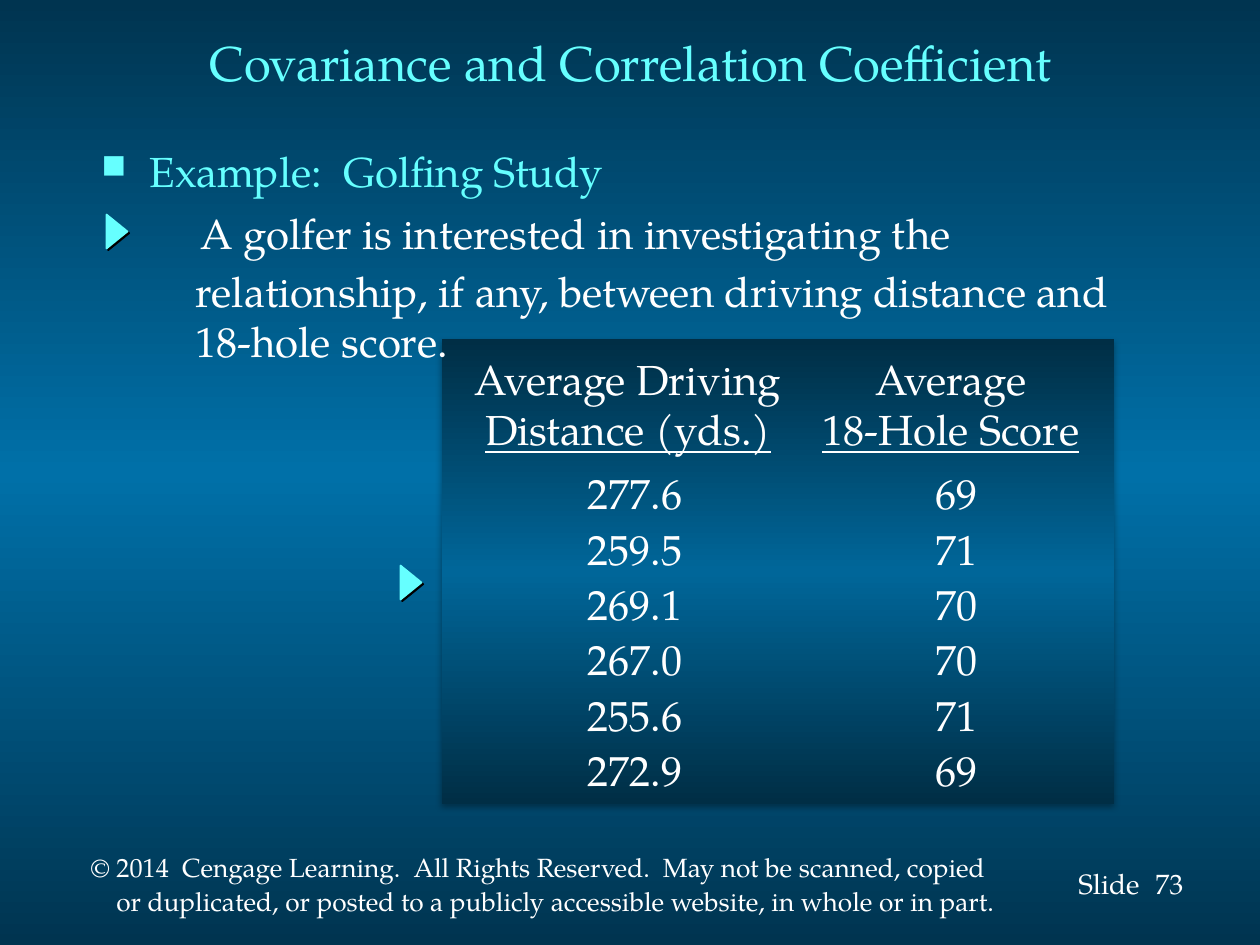
from copy import deepcopy
from pptx import Presentation
from pptx.dml.color import RGBColor
from pptx.enum.shapes import MSO_SHAPE
from pptx.enum.text import MSO_ANCHOR, PP_ALIGN
from pptx.oxml import parse_xml
from pptx.oxml.ns import nsdecls, qn
from pptx.util import Emu, Pt

RECT, WEDGE = MSO_SHAPE.RECTANGLE, MSO_SHAPE.ISOSCELES_TRIANGLE
TOP, MIDDLE = MSO_ANCHOR.TOP, MSO_ANCHOR.MIDDLE
LEFT, CENTER = PP_ALIGN.LEFT, PP_ALIGN.CENTER
WHITE = RGBColor(0xFF, 0xFF, 0xFF)
AQUA = RGBColor(0x66, 0xFF, 0xFF)
DEEP, SEA = RGBColor(0x00, 0x34, 0x50), RGBColor(0x00, 0x70, 0xA8)
DARK, BLUE = RGBColor(0x00, 0x2E, 0x45), RGBColor(0x00, 0x66, 0x99)
FONT = "TeX Gyre Pagella"


def px(n):
    return Emu(round(n * 914400 / 126))


class Deck:
    """Holds the style and the current slide."""

    def __init__(self):
        self.prs = Presentation()
        self.prs.slide_width, self.prs.slide_height = px(1260), px(945)
        self.slide = self.prs.slides.add_slide(self.prs.slide_layouts[5])
        self.blend(self.slide.background.fill, self.slide.element, DEEP, SEA)

    def blend(self, fill, root, edge, mid):
        fill.gradient()
        fill.gradient_angle = 90
        stops = next(root.iter(qn("a:gsLst")))
        stops.insert(1, deepcopy(stops[0]))
        for stop, place, color in zip(fill.gradient_stops, (0, 0.5, 1), (edge, mid, edge)):
            stop.position = place
            stop.color.rgb = color

    def shade(self, shape, alpha, blur, dist, angle):
        shape.shadow.inherit = False
        shape.element.spPr.find(qn("a:effectLst")).append(parse_xml(
            f'<a:outerShdw {nsdecls("a")} blurRad="{Pt(blur)}" dist="{Pt(dist)}" '
            f'dir="{angle * 60000}" rotWithShape="0"><a:srgbClr val="000000">'
            f'<a:alpha val="{alpha * 1000}"/></a:srgbClr></a:outerShdw>'))

    def style(self, para, size, color, align):
        para.alignment = align
        font = para.font
        font.name, font.size, font.color.rgb = FONT, Pt(size), color

    def title(self, text, x, y, w, h):
        shape = self.slide.shapes.title
        shape.left, shape.top, shape.width, shape.height = map(px, (x, y, w, h))
        frame = shape.text_frame
        frame.text, frame.vertical_anchor = text, MIDDLE
        self.style(frame.paragraphs[0], 28, AQUA, CENTER)

    def text(self, lines, x, y, w, h, size=24, color=WHITE, align=LEFT,
             anchor=TOP, wrap=False, gap=0, space=None, pads=()):
        frame = self.slide.shapes.add_textbox(*map(px, (x, y, w, h))).text_frame
        frame.word_wrap, frame.vertical_anchor = wrap, anchor
        if align == CENTER:
            frame.margin_left = frame.margin_right = 0
        frame.text = "\n".join(lines)
        for i, para in enumerate(frame.paragraphs):
            if pads:
                para._p.get_or_add_pPr().set("marL", str(px(pads[i])))
            if i and gap:
                para.space_before = Pt(gap)
            if space:
                para.line_spacing = space
            self.style(para, size, color, align)
        return frame.paragraphs

    def bullet(self, text, x, y, w, h):
        para = self.text([text], x, y, w, h, color=AQUA, wrap=True, pads=[48])[0]
        props = para._p.get_or_add_pPr()
        props.set("indent", str(-px(48)))
        for i, mark in enumerate(('buSzPct {} val="80000"', 'buChar {} char="■"')):
            props.insert(i, parse_xml(f'<a:{mark.format(nsdecls("a"))}/>'))

    def panel(self, x, y, w, h):
        shape = self.slide.shapes.add_shape(RECT, *map(px, (x, y, w, h)))
        self.blend(shape.fill, shape.element, DARK, BLUE)
        shape.line.fill.background()
        self.shade(shape, 32, 3.5, 2.2, 90)

    def wedge(self, x, y):
        shape = self.slide.shapes.add_shape(WEDGE, *map(px, (x, y, 34, 21)))
        shape.rotation = 90
        shape.fill.solid()
        shape.fill.fore_color.rgb = shape.line.color.rgb = AQUA
        shape.line.width = Pt(1)
        self.shade(shape, 100, 0, 1.4, 45)

    def column(self, head, values, mid, axis):
        lines = self.text(head, mid - 164, 342, 328, 123, align=CENTER, anchor=MIDDLE)
        lines[-1].font.underline = True
        self.text(values, axis - 70, 477, 140, 304, align=CENTER, anchor=MIDDLE, space=1.1)


def main():
    deck = Deck()
    deck.text(["73"], 1143, 860, 60, 47, size=16)
    deck.text(["Slide"], 1066, 860, 90, 47, size=16)
    deck.text(["© 2014  Cengage Learning.  All Rights Reserved.  May not be scanned, copied",
               "or duplicated, or posted to a publicly accessible website, in whole or in part."],
              78, 849, 941, 76, size=15, gap=3, space=Pt(16), pads=(0, 26))
    deck.panel(442, 339, 672, 465)
    deck.title("Covariance and Correlation Coefficient", 95, 5, 1071, 113)
    deck.bullet("Example:  Golfing Study", 89, 139, 917, 67)
    deck.text(["A golfer is interested in investigating the",
               "relationship, if any, between driving distance and 18-hole score."],
              135, 201, 995, 212, wrap=True, gap=4.5, pads=(53, 48))
    deck.column(["Average Driving", "Distance (yds.)"],
                ["277.6", "259.5", "269.1", "267.0", "255.6", "272.9"], 628, 635)
    deck.column(["Average", "18-Hole Score"],
                ["69", "71", "70", "70", "71", "69"], 951, 957)
    for x, y in ((100, 221), (394, 572)):
        deck.wedge(x, y)
    deck.prs.save("out.pptx")


if __name__ == "__main__":
    main()
